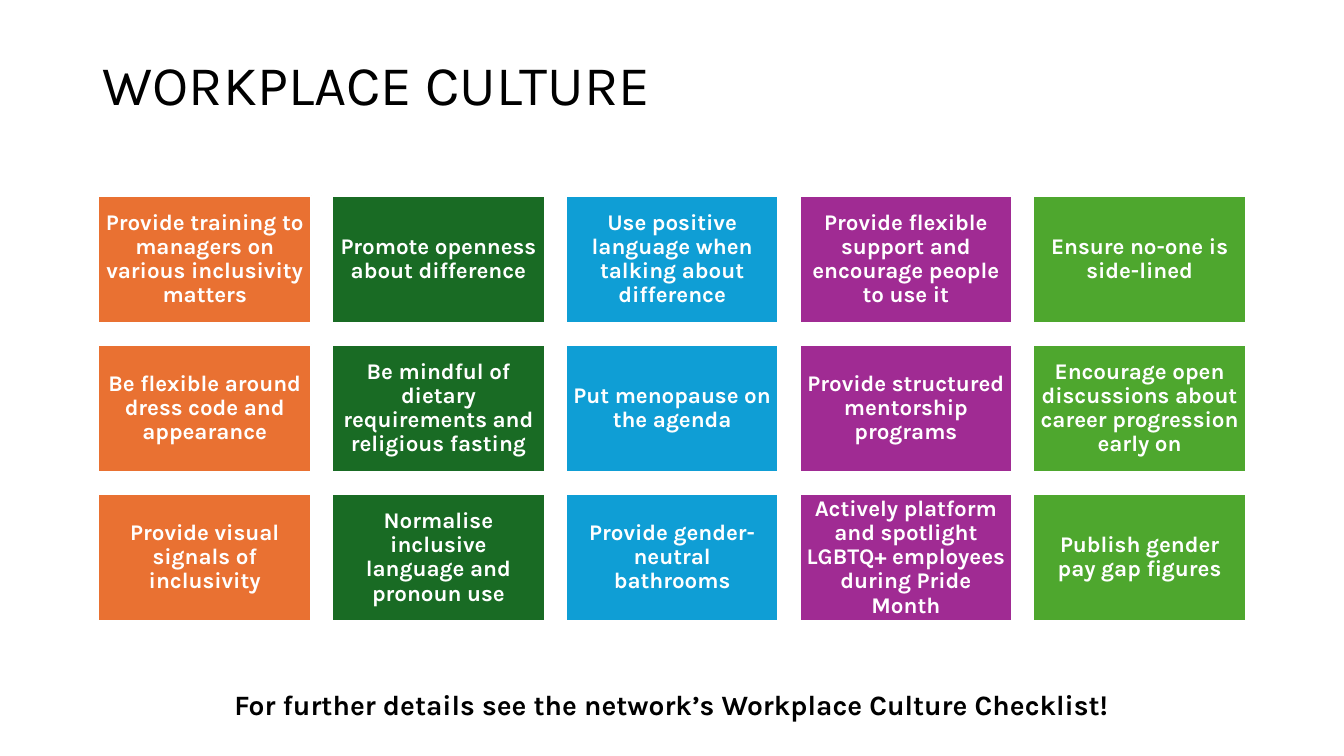
from dataclasses import dataclass

from pptx import Presentation
from pptx.dml.color import RGBColor as Rgb
from pptx.enum.shapes import MSO_SHAPE as Form
from pptx.enum.text import MSO_ANCHOR as Anchor, PP_ALIGN as Align
from pptx.slide import Slide
from pptx.text.text import TextFrame
from pptx.util import Cm, Pt

HUES = {
    "orange": "E97132",
    "forest": "196B24",
    "blue": "0F9ED5",
    "purple": "A02B93",
    "green": "4EA72E",
    "white": "FFFFFF",
    "black": "000000",
}
FONT = "Karla"

# Card grid, in centimetres
LEFT, TOP = 2.48, 4.93
WIDE, HIGH = 5.36, 3.2
STEP_X, STEP_Y = 5.89, 3.76
INSET = 0.17


@dataclass
class Column:
    hue: str
    tips: list[str]


@dataclass
class Label:
    text: str
    box: tuple[float, float, float, float]
    size: int
    bold: bool
    align: Align
    anchor: Anchor
    space: float


COLUMNS = [
    Column("orange", [
        "Provide training to managers on various inclusivity matters",
        "Be flexible around dress code and appearance",
        "Provide visual signals of inclusivity",
    ]),
    Column("forest", [
        "Promote openness about difference",
        "Be mindful of dietary requirements and religious fasting",
        "Normalise inclusive language and pronoun use",
    ]),
    Column("blue", [
        "Use positive language when talking about difference",
        "Put menopause on the agenda",
        "Provide gender-neutral bathrooms",
    ]),
    Column("purple", [
        "Provide flexible support and encourage people to use it",
        "Provide structured mentorship programs",
        "Actively platform and spotlight LGBTQ+ employees during Pride Month",
    ]),
    Column("green", [
        "Ensure no-one is side-lined",
        "Encourage open discussions about career progression early on",
        "Publish gender pay gap figures",
    ]),
]

LABELS = [
    Label("WORKPLACE CULTURE", (2.34, 1.02, 29.21, 2.36),
          40, False, Align.LEFT, Anchor.MIDDLE, 0.9),
    Label("For further details see the network’s Workplace Culture Checklist!",
          (2.46, 17.2, 28.93, 1.12), 20, True, Align.CENTER, Anchor.TOP, 1.0),
]


def color(hue: str) -> Rgb:
    return Rgb.from_string(HUES[hue])


def write(frame: TextFrame, text: str, size: int, bold: bool, hue: str,
          align: Align, anchor: Anchor, space: float) -> None:
    frame.word_wrap = True
    frame.vertical_anchor = anchor
    para = frame.paragraphs[0]
    para.text = text
    para.alignment = align
    para.line_spacing = space
    font = para.font
    font.name, font.size, font.bold = FONT, Pt(size), bold
    font.color.rgb = color(hue)


def add_label(slide: Slide, label: Label) -> None:
    box = slide.shapes.add_textbox(*map(Cm, label.box))
    write(box.text_frame, label.text, label.size, label.bold, "black",
          label.align, label.anchor, label.space)


def add_card(slide: Slide, text: str, hue: str, col: int, row: int) -> None:
    card = slide.shapes.add_shape(
        Form.RECTANGLE, Cm(LEFT + col * STEP_X), Cm(TOP + row * STEP_Y),
        Cm(WIDE), Cm(HIGH))
    card.shadow.inherit = False
    card.fill.solid()
    card.fill.fore_color.rgb = color(hue)
    card.line.color.rgb = color("white")
    card.line.width = Pt(1.5)
    frame = card.text_frame
    frame.margin_left = frame.margin_right = Cm(INSET)
    frame.margin_top = frame.margin_bottom = Cm(INSET)
    write(frame, text, 16, True, "white", Align.CENTER, Anchor.MIDDLE, 0.9)


def main() -> None:
    deck = Presentation()
    deck.slide_width, deck.slide_height = Cm(33.87), Cm(19.05)
    slide = deck.slides.add_slide(deck.slide_layouts[6])

    # Title and closing line
    for label in LABELS:
        add_label(slide, label)

    # One colour per column of cards
    for col, column in enumerate(COLUMNS):
        for row, tip in enumerate(column.tips):
            add_card(slide, tip, column.hue, col, row)

    deck.save("out.pptx")


if __name__ == "__main__":
    main()
